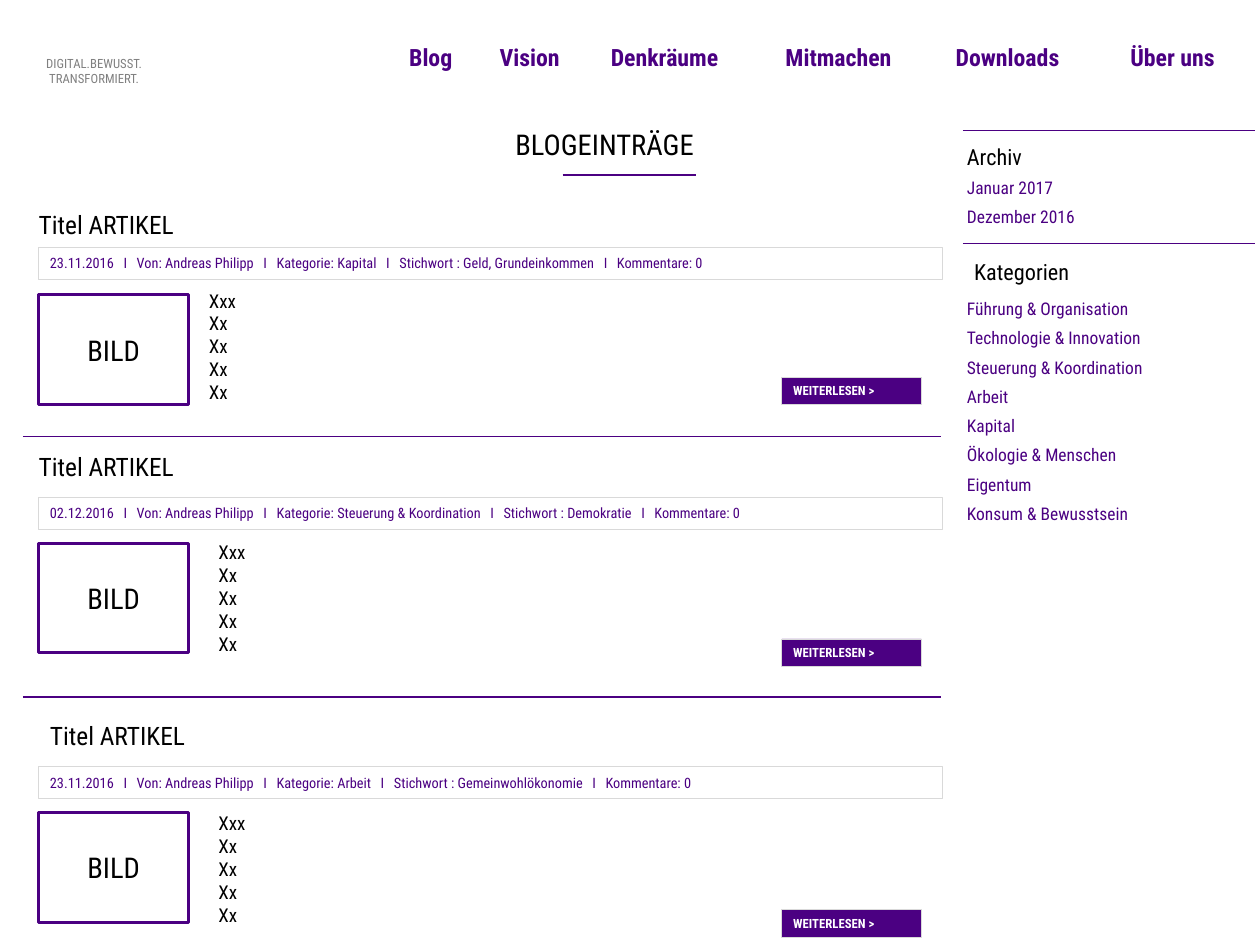
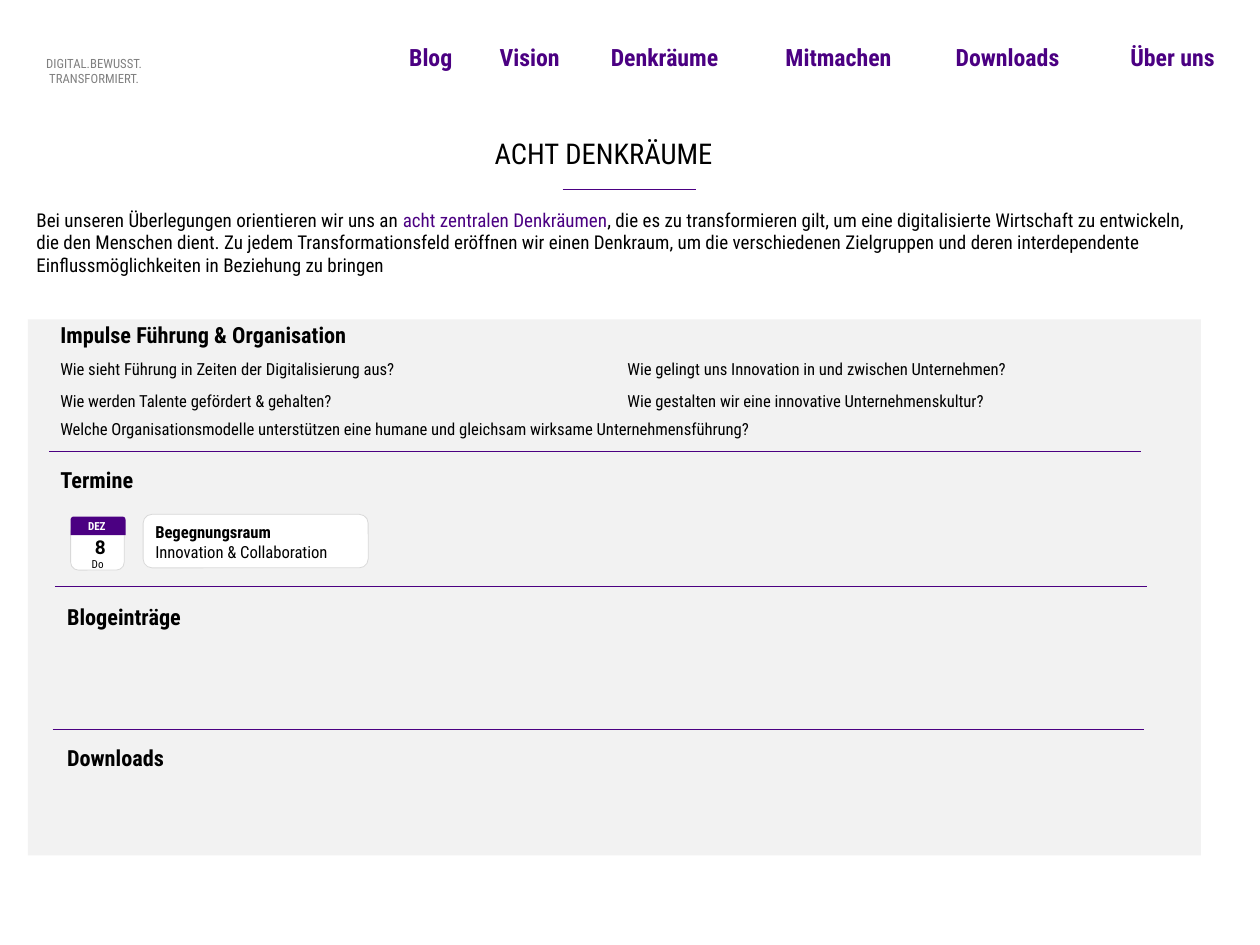
from lxml.etree import SubElement
from pptx import Presentation
from pptx.dml.color import RGBColor
from pptx.enum.shapes import MSO_CONNECTOR, MSO_SHAPE
from pptx.enum.text import MSO_ANCHOR as Anchor, PP_ALIGN as Align
from pptx.oxml.ns import qn
from pptx.util import Cm, Pt

COLORS = {
    "purple": "4B0082",
    "black": "000000",
    "white": "FFFFFF",
    "gray": "808080",
    "border": "D9D9D9",
    "panel": "F2F2F2",
}
FONT = "Roboto Condensed"
TAGLINE = ["DIGITAL.BEWUSST.", "TRANSFORMIERT."]
NAVIGATION = [
    ("Blog", 1.76),
    ("Vision", 2.22),
    ("Denkräume", 3.63),
    ("Mitmachen", 3.53),
    ("Downloads", 3.63),
    ("Über uns", 2.97),
]
NAVIGATION_LEFT, NAVIGATION_GAP = 8.89, 0.25
TIGHT = 0.2

ARTICLES = [
    {
        "meta": ["23.11.2016", "Von: Andreas Philipp", "Kategorie: Kapital",
                 "Stichwort : Geld, Grundeinkommen", "Kommentare: 0"],
        "title": (0.61, 4.52), "bar": 5.49, "image": 6.55,
        "teaser": (4.39, 6.3), "button": 8.38,
    },
    {
        "meta": ["02.12.2016", "Von: Andreas Philipp", "Kategorie: Steuerung & Koordination",
                 "Stichwort : Demokratie", "Kommentare: 0"],
        "title": (0.61, 9.91), "bar": 11.05, "image": 12.07,
        "teaser": (4.6, 11.89), "button": 14.2,
    },
    {
        "meta": ["23.11.2016", "Von: Andreas Philipp", "Kategorie: Arbeit",
                 "Stichwort : Gemeinwohlökonomie", "Kommentare: 0"],
        "title": (0.86, 15.88), "bar": 17.04, "image": 18.06,
        "teaser": (4.6, 17.91), "button": 20.22,
    },
]
TEASER = ["Xxx", "Xx", "Xx", "Xx", "Xx"]
ARTICLE_RULES = [9.7, 15.49]

SIDEBAR = [
    ("Archiv", 21.23, 3.07, 3.81, ["Januar 2017", "Dezember 2016"]),
    ("Kategorien", 21.39, 5.61, 6.5, [
        "Führung & Organisation", "Technologie & Innovation",
        "Steuerung & Koordination", "Arbeit", "Kapital",
        "Ökologie & Menschen", "Eigentum", "Konsum & Bewusstsein",
    ]),
]
SIDEBAR_RULES = [2.9, 5.41]
SIDEBAR_STEP = 0.65

INTRO = [[
    ("Bei unseren Überlegungen orientieren wir uns an ", {}),
    ("acht zentralen Denkräumen", {"color": "purple"}),
    (", die es zu transformieren gilt, um eine digitalisierte Wirtschaft zu entwickeln, "
     "die den Menschen dient. Zu jedem Transformationsfeld eröffnen wir einen Denkraum, "
     "um die verschiedenen Zielgruppen und deren interdependente Einflussmöglichkeiten "
     "in Beziehung zu bringen", {}),
]]
QUESTIONS = [
    ("Wie sieht Führung in Zeiten der Digitalisierung aus?", 1.09, 7.85, 9.7),
    ("Wie werden Talente gefördert & gehalten?", 1.09, 8.56, 7.87),
    ("Wie gelingt uns Innovation in und zwischen Unternehmen?", 13.69, 7.85, 10.41),
    ("Wie gestalten wir eine innovative Unternehmenskultur?", 13.69, 8.56, 9.63),
    ("Welche Organisationsmodelle unterstützen eine humane und gleichsam wirksame "
     "Unternehmensführung?", 1.09, 9.19, 18.52),
]
SECTIONS = [
    ("Impulse Führung & Organisation", 1.09, 7.01),
    ("Termine", 1.09, 10.24),
    ("Blogeinträge", 1.24, 13.28),
    ("Downloads", 1.24, 16.41),
]
SECTION_RULES = [(1.09, 10.03), (1.22, 13.03), (1.17, 16.21)]
SECTION_RULE_WIDTH = 24.25
EVENT = [[("Begegnungsraum", {"bold": True})], "Innovation & Collaboration"]


def rgb(name):
    return RGBColor.from_string(COLORS[name])


def write_text(shape, text, size=12, color="black", bold=False, font=FONT,
               align=Align.LEFT, anchor=Anchor.TOP, inset=None):
    frame = shape.text_frame
    frame.word_wrap = True
    frame.vertical_anchor = anchor
    if inset is not None:
        frame.margin_left = frame.margin_right = Cm(inset)
        frame.margin_top = frame.margin_bottom = Cm(inset)
    lines = [text] if isinstance(text, str) else text
    for index, line in enumerate(lines):
        paragraph = frame.add_paragraph() if index else frame.paragraphs[0]
        paragraph.alignment = align
        for words, changes in [(line, {})] if isinstance(line, str) else line:
            run = paragraph.add_run()
            run.text = words
            run.font.name = font
            run.font.size = Pt(size)
            run.font.bold = changes.get("bold", bold)
            run.font.color.rgb = rgb(changes.get("color", color))
            if "spacing" in changes:
                run._r.get_or_add_rPr().set("spc", str(changes["spacing"]))


def add_text(slide, text, left, top, width, height, **text_format):
    box = slide.shapes.add_textbox(Cm(left), Cm(top), Cm(width), Cm(height))
    write_text(box, text, **text_format)


def add_box(slide, left, top, width, height, kind=MSO_SHAPE.RECTANGLE,
            fill=None, line=None, weight=0.5, text=None, **text_format):
    shape = slide.shapes.add_shape(kind, Cm(left), Cm(top), Cm(width), Cm(height))
    shape.shadow.inherit = False
    if fill:
        shape.fill.solid()
        shape.fill.fore_color.rgb = rgb(fill)
    else:
        shape.fill.background()
    if line:
        shape.line.color.rgb = rgb(line)
        shape.line.width = Pt(weight)
    else:
        shape.line.fill.background()
    if text:
        write_text(shape, text, anchor=Anchor.MIDDLE, **text_format)


def add_rule(slide, left, top, width):
    rule = slide.shapes.add_connector(
        MSO_CONNECTOR.STRAIGHT, Cm(left), Cm(top), Cm(left + width), Cm(top))
    rule.line.color.rgb = rgb("purple")
    rule.line.width = Pt(0.75)
    SubElement(rule._element.spPr, qn("a:effectLst"))


def meta_line(parts):
    gap = (" ", {"spacing": 400})
    runs = [(parts[0], {})]
    for part in parts[1:]:
        runs += [gap, ("I", {}), gap, (part, {})]
    return [runs]


def add_page(presentation, title, left, top, width, rule_top):
    slide = presentation.slides.add_slide(presentation.slide_layouts[6])
    add_text(slide, TAGLINE, 0.33, 0.84, 3.53, 1.27, size=8, color="gray",
             align=Align.CENTER, anchor=Anchor.BOTTOM, inset=TIGHT)
    item_left = NAVIGATION_LEFT
    for label, item_width in NAVIGATION:
        add_text(slide, label, item_left, 0.76, item_width, 0.97, size=15,
                 color="purple", bold=True, inset=TIGHT)
        item_left += item_width + NAVIGATION_GAP
    add_text(slide, title, left, top, width, 1.02, size=18)
    add_rule(slide, 12.5, rule_top, 2.97)
    return slide


def add_article(slide, article):
    add_text(slide, "Titel ARTIKEL", *article["title"], 10.16, 0.94, size=16)
    add_box(slide, 0.86, article["bar"], 20.07, 0.71, line="border",
            text=meta_line(article["meta"]), size=9, color="purple")
    add_text(slide, TEASER, *article["teaser"], 16, 2.82)
    add_box(slide, 0.86, article["image"], 3.33, 2.44, line="purple", weight=2,
            text="BILD", size=18, align=Align.CENTER)
    add_box(slide, 17.37, article["button"], 3.1, 0.61, fill="purple", line="border",
            text="WEITERLESEN >", size=8, color="white", bold=True)


def build_blog(presentation):
    slide = add_page(presentation, "BLOGEINTRÄGE", 11.2, 2.69, 5.59, 3.89)
    for article in ARTICLES:
        add_article(slide, article)
    for top in ARTICLE_RULES:
        add_rule(slide, 0.51, top, 20.4)
    for heading, left, top, first_top, entries in SIDEBAR:
        add_text(slide, heading, left, top, 4.88, 0.86, size=14)
        for index, entry in enumerate(entries):
            add_text(slide, entry, 21.23, first_top + index * SIDEBAR_STEP, 6.07, 0.74,
                     size=11, color="purple")
    for top in SIDEBAR_RULES:
        add_rule(slide, 21.39, top, 6.5)


def add_event(slide):
    add_box(slide, 1.57, 11.63, 1.19, 1.04, MSO_SHAPE.ROUNDED_RECTANGLE,
            fill="white", line="border")
    centered = {"align": Align.CENTER, "anchor": Anchor.MIDDLE, "inset": TIGHT}
    add_text(slide, "8", 1.91, 11.96, 0.53, 0.41, bold=True, font="Roboto", **centered)
    add_text(slide, "Do", 1.75, 12.32, 0.84, 0.41, size=7, **centered)
    add_box(slide, 1.57, 11.48, 1.22, 0.41, MSO_SHAPE.ROUND_2_SAME_RECTANGLE,
            fill="purple", text="DEZ ", size=7, color="white", bold=True,
            align=Align.CENTER)
    add_box(slide, 3.18, 11.43, 5, 1.19, MSO_SHAPE.ROUNDED_RECTANGLE,
            fill="white", line="border")
    add_text(slide, EVENT, 3.2, 11.48, 5.08, 1.14, size=10.5)


def build_topics(presentation):
    slide = add_page(presentation, "ACHT DENKRÄUME", 10.74, 2.9, 6.5, 4.22)
    add_text(slide, INTRO, 0.56, 4.5, 26.26, 2.31)
    add_box(slide, 0.62, 7.1, 26.06, 11.91, fill="panel")
    for question, left, top, width in QUESTIONS:
        add_text(slide, question, left, top, width, 0.71, size=10.5)
    for heading, left, top in SECTIONS:
        add_text(slide, heading, left, top, 9.58, 0.86, size=14, bold=True)
    for left, top in SECTION_RULES:
        add_rule(slide, left, top, SECTION_RULE_WIDTH)
    add_event(slide)


def main():
    presentation = Presentation()
    presentation.slide_width = Cm(27.99)
    presentation.slide_height = Cm(21)
    build_blog(presentation)
    build_topics(presentation)
    presentation.save("out.pptx")


if __name__ == "__main__":
    main()
